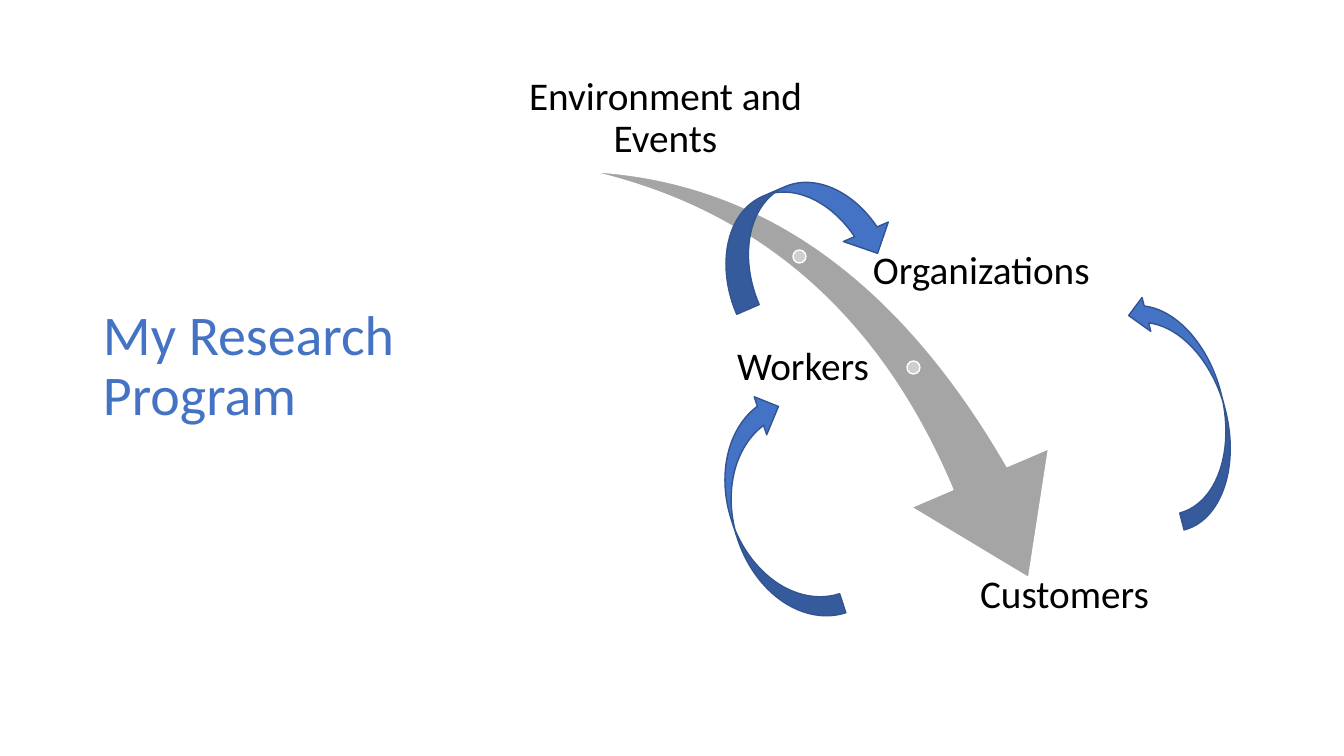
import pptx
import pptx.dml.color
import pptx.enum.shapes
import pptx.enum.text
import pptx.util

PX = 914400 / 100.8
COLORS = {"blue": "4472C4", "edge": "325491", "gray": "A5A5A5", "dot": "CFCFCF", "white": "FFFFFF", "black": "000000"}
KIND = pptx.enum.shapes.MSO_SHAPE
ALIGN = pptx.enum.text.PP_ALIGN
ANCHOR = pptx.enum.text.MSO_ANCHOR


def add_figure(page, kind, frame, turn, fill, edge):
    figure = page.shapes.add_shape(kind, *[round(v * PX) for v in frame])
    figure.rotation = turn
    figure.shadow.inherit = False
    figure.fill.solid()
    figure.fill.fore_color.rgb = pptx.dml.color.RGBColor.from_string(COLORS[fill])
    figure.line.color.rgb = pptx.dml.color.RGBColor.from_string(COLORS[edge])
    figure.line.width = pptx.util.Pt(1)
    return figure


def write_text(box, text, size, color, align, anchor, inset):
    frame = box.text_frame
    frame_format = {"word_wrap": True, "auto_size": pptx.enum.text.MSO_AUTO_SIZE.NONE, "vertical_anchor": anchor}
    for side in ("left", "top", "right", "bottom"):
        frame_format["margin_" + side] = round(inset[side in ("top", "bottom")] * PX)
    for name, value in frame_format.items():
        setattr(frame, name, value)
    para = frame.paragraphs[0]
    para.alignment = align
    para.line_spacing = 0.9
    span = para.add_run()
    span.text = text
    for name, value in {"name": "Calibri", "size": pptx.util.Pt(size)}.items():
        setattr(span.font, name, value)
    span.font.color.rgb = pptx.dml.color.RGBColor.from_string(COLORS[color])


deck = pptx.Presentation()
deck.slide_width = round(1344 * PX)
deck.slide_height = round(756 * PX)
page = deck.slides.add_slide(deck.slide_layouts[5])

title = page.shapes.title
for name, value in {"left": 93, "top": 69, "width": 370, "height": 597}.items():
    setattr(title, name, round(value * PX))
write_text(title, "My Research Program", 40, "blue", ALIGN.LEFT, ANCHOR.MIDDLE, (10, 5))

swoosh = add_figure(page, KIND.SWOOSH_ARROW, (579, 187, 515, 359), 73.3, "gray", "white")
swoosh.adjustments[0] = 0.163
swoosh.adjustments[1] = 0.314

for left, top in [(793, 250), (907, 361)]:
    add_figure(page, KIND.OVAL, (left, top, 13, 13), 0, "dot", "white")

labels = [
    ("Environment and Events", (492, 69, 347, 96), ALIGN.CENTER, ANCHOR.BOTTOM),
    ("Organizations", (869, 224, 335, 96), ALIGN.LEFT, ANCHOR.MIDDLE),
    ("Workers", (544, 320, 329, 96), ALIGN.RIGHT, ANCHOR.MIDDLE),
    ("Customers", (900, 571, 329, 96), ALIGN.CENTER, ANCHOR.TOP),
]
for text, frame, align, anchor in labels:
    box = page.shapes.add_textbox(*[round(v * PX) for v in frame])
    write_text(box, text, 28, "black", align, anchor, (4, 4))

curved_arrows = [
    (KIND.CURVED_LEFT_ARROW, (750, 145, 98, 178), 246.6),
    (KIND.CURVED_LEFT_ARROW, (731, 394, 80, 237), 161.9),
    (KIND.CURVED_RIGHT_ARROW, (1153, 286, 70, 239), 165.5),
]
for kind, frame, turn in curved_arrows:
    add_figure(page, kind, frame, turn, "blue", "edge")

deck.save("out.pptx")
